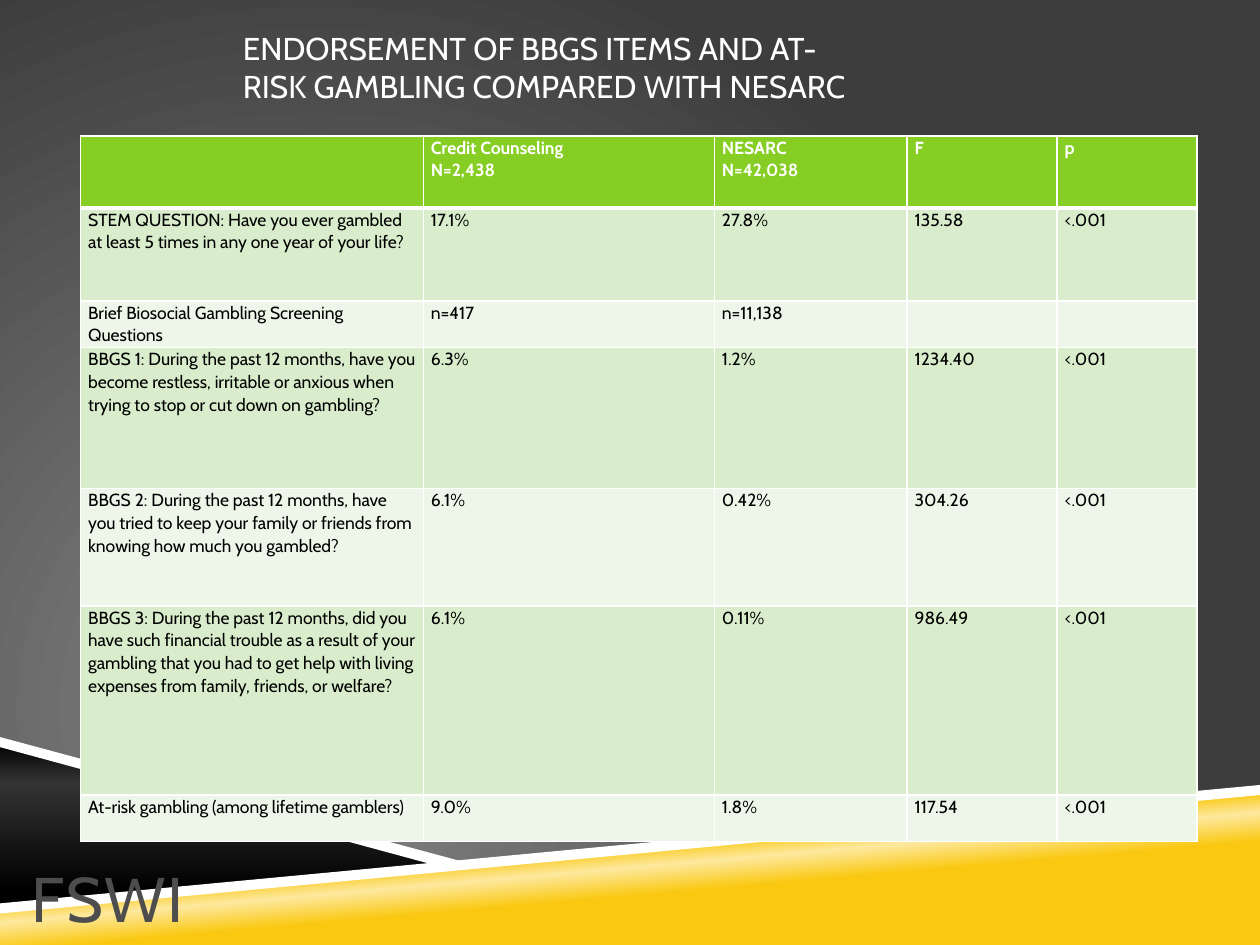
from lxml import etree
from pptx import Presentation
from pptx.dml.color import RGBColor
from pptx.enum.text import MSO_ANCHOR
from pptx.oxml import parse_xml
from pptx.oxml.ns import nsdecls, qn
from pptx.util import Inches, Pt

BOTTOM = MSO_ANCHOR.BOTTOM
FONT = "Cabin"
WHITE = "FFFFFF"
HEADER_FILL = "86CE24"
BAND_FILLS = ("D9EDCD", "EDF6E8")

TITLE = "ENDORSEMENT OF BBGS ITEMS AND AT-\nRISK GAMBLING COMPARED WITH NESARC"
COLUMN_WIDTHS = (2.72, 2.31, 1.53, 1.19, 1.11)
ROW_HEIGHTS = (0.57, 0.74, 0.37, 1.12, 0.93, 1.5, 0.37)
ROWS = (
    ("", "Credit Counseling\nN=2,438", "NESARC\nN=42,038", "F", "p"),
    ("STEM QUESTION: Have you ever gambled at least 5 times in any one year "
     "of your life?", "17.1%", "27.8%", "135.58", "<.001"),
    ("Brief Biosocial Gambling Screening Questions", "n=417", "n=11,138", "", ""),
    ("BBGS 1: During the past 12 months, have you become restless, irritable "
     "or anxious when trying to stop or cut down on gambling?",
     "6.3%", "1.2%", "1234.40", "<.001"),
    ("BBGS 2: During the past 12 months, have you tried to keep your family "
     "or friends from knowing how much you gambled?",
     "6.1%", "0.42%", "304.26", "<.001"),
    ("BBGS 3: During the past 12 months, did you have such financial trouble "
     "as a result of your gambling that you had to get help with living "
     "expenses from family, friends, or welfare?",
     "6.1%", "0.11%", "986.49", "<.001"),
    ("At-risk gambling (among lifetime gamblers)", "9.0%", "1.8%", "117.54", "<.001"),
)


def rgb(value):
    return RGBColor.from_string(value)


def set_gradient(props, stops, shading):
    """Replace the gradient in props; stops are (percent, colour) pairs."""
    stop_xml = "".join(
        f'<a:gs pos="{pos * 1000}"><a:srgbClr val="{color}"/></a:gs>'
        for pos, color in stops)
    new = parse_xml(f'<a:gradFill {nsdecls("a")} rotWithShape="1">'
                    f"<a:gsLst>{stop_xml}</a:gsLst>{shading}</a:gradFill>")
    old = props.find(qn("a:gradFill"))
    props.replace(old, new)


def format_text(tf, size, color, bold=False, spacing=None):
    for p in tf.paragraphs:
        p.line_spacing = spacing
        for r in p.runs:
            r.font.name = FONT
            r.font.size = Pt(size)
            r.font.bold = bold
            r.font.color.rgb = rgb(color)


def add_background(s):
    fill = s.background.fill
    fill.gradient()
    set_gradient(
        s.background._cSld.bg.bgPr, ((0, "878787"), (100, "3D3D3D")),
        '<a:path path="circle"><a:fillToRect l="50000" t="100000" '
        'r="100000" b="50000"/></a:path>')


def add_polygon(s, points, color=None, stops=None, angle=0):
    corners = [(Inches(x), Inches(y)) for x, y in points]
    builder = s.shapes.build_freeform(*corners[0])
    builder.add_line_segments(corners[1:], close=True)
    sp = builder.convert_to_shape()
    sp.shadow.inherit = False
    sp.line.fill.background()
    if stops:
        sp.fill.gradient()
        set_gradient(sp._element.spPr, stops,
                     f'<a:lin ang="{angle * 60000}" scaled="0"/>')
    else:
        sp.fill.solid()
        sp.fill.fore_color.rgb = rgb(color)


def add_sweeps(s):
    """Yellow and black wedges with their white edges, along the slide foot."""
    add_polygon(s, ((0, 7.21), (10, 6.27), (10, 7.5), (0, 7.5)), angle=265,
                stops=((39, "FAC810"), (50, "FDE99F"), (58, "FAC810")))
    add_polygon(s, ((0, 5.89), (3.59, 6.85), (0, 7.21)), angle=90,
                stops=((0, "000000"), (24, "333333"), (90, "000000")))
    add_polygon(s, ((10, 6.23), (0, 7.17), (0, 7.25), (10, 6.31)), WHITE)
    add_polygon(s, ((0, 5.85), (0, 5.93), (3.5, 6.88), (3.75, 6.86)), WHITE)


def add_footer(s, left, top, width, height):
    sp = s.shapes.add_textbox(Inches(left), Inches(top), Inches(width), Inches(height))
    tf = sp.text_frame
    tf.word_wrap = True
    tf.vertical_anchor = BOTTOM
    tf.margin_left = tf.margin_right = tf.margin_bottom = 0
    tf.text = "FSWI"
    format_text(tf, 36, "4D4D4D")
    tf.paragraphs[0].runs[0].font._element.set("spc", "110")


def add_title(s, left, top, width, height):
    sp = s.shapes.add_textbox(Inches(left), Inches(top), Inches(width), Inches(height))
    tf = sp.text_frame
    tf.word_wrap = False
    tf.text = TITLE
    format_text(tf, 18, WHITE)


def set_borders(cell, top, bottom):
    tc_pr = cell._tc.get_or_add_tcPr()
    for side, width in (("L", 1), ("R", 1), ("T", top), ("B", bottom)):
        ln = etree.SubElement(tc_pr, qn(f"a:ln{side}"), w=str(Pt(width)))
        fill = etree.SubElement(ln, qn("a:solidFill"))
        etree.SubElement(fill, qn("a:srgbClr"), val=WHITE)


def add_results_table(s, left, top):
    frame = s.shapes.add_table(
        len(ROWS), len(COLUMN_WIDTHS), Inches(left), Inches(top),
        Inches(sum(COLUMN_WIDTHS)), Inches(sum(ROW_HEIGHTS)))
    table = frame.table
    for column, width in zip(table.columns, COLUMN_WIDTHS):
        column.width = Inches(width)
    for i, (values, height) in enumerate(zip(ROWS, ROW_HEIGHTS)):
        table.rows[i].height = Inches(height)
        header = i == 0
        for cell, value in zip(table.rows[i].cells, values):
            cell.margin_left = cell.margin_right = Inches(0.06)
            cell.margin_top = cell.margin_bottom = 0
            set_borders(cell, 3 if i == 1 else 1, 3 if header else 1)
            cell.fill.solid()
            cell.fill.fore_color.rgb = rgb(HEADER_FILL if header else BAND_FILLS[(i - 1) % 2])
            cell.text_frame.text = value
            format_text(cell.text_frame, 10, WHITE if header else "000000", header, 1.07)


def main():
    prs = Presentation()
    prs.slide_width, prs.slide_height = Inches(10), Inches(7.5)
    s = prs.slides.add_slide(prs.slide_layouts[6])
    add_background(s)
    add_sweeps(s)
    add_footer(s, 0.25, 7.02, 3.17, 0.4)
    add_results_table(s, 0.64, 1.08)
    add_title(s, 1.83, 0.18, 5.14, 0.71)
    prs.save("out.pptx")


if __name__ == "__main__":
    main()
